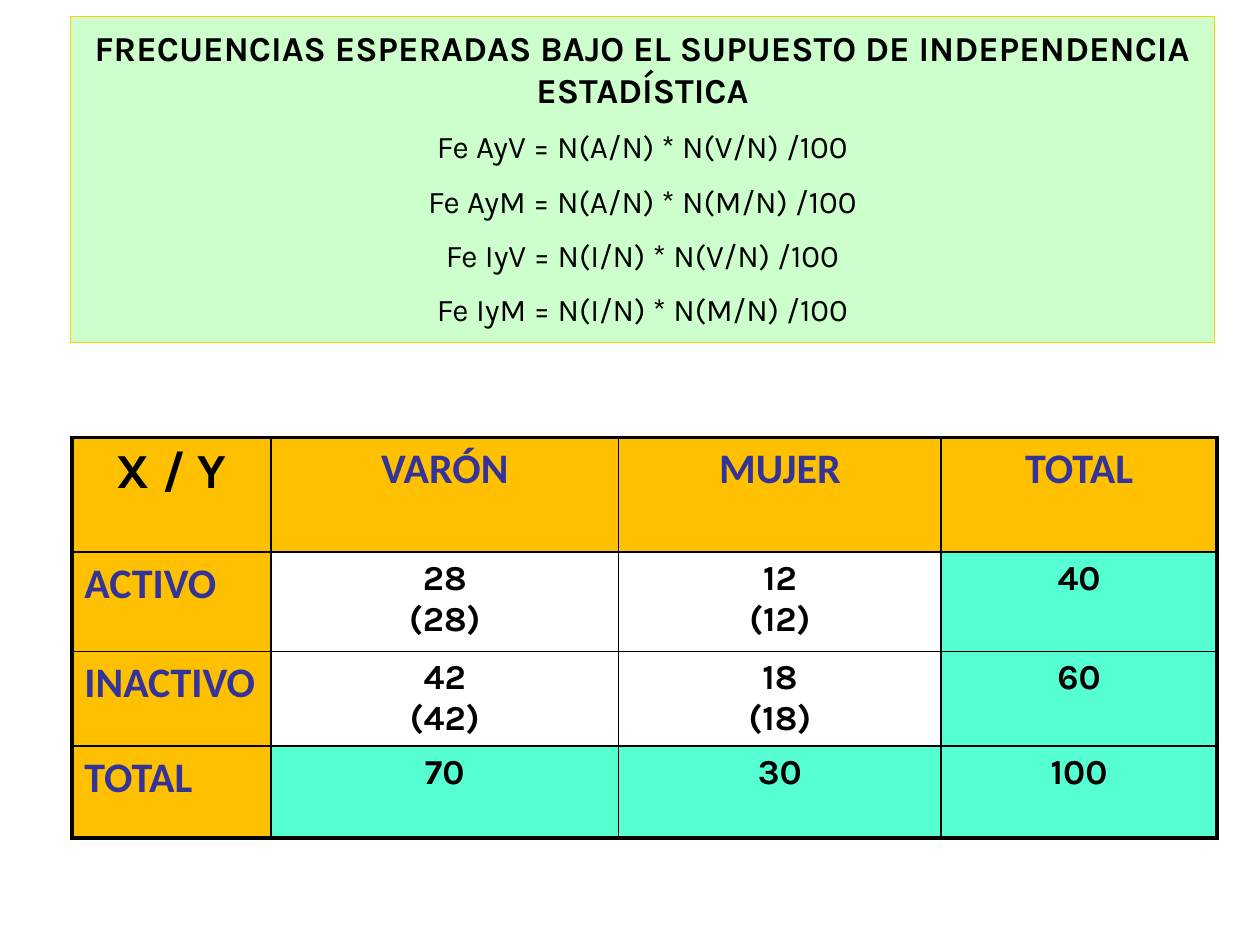
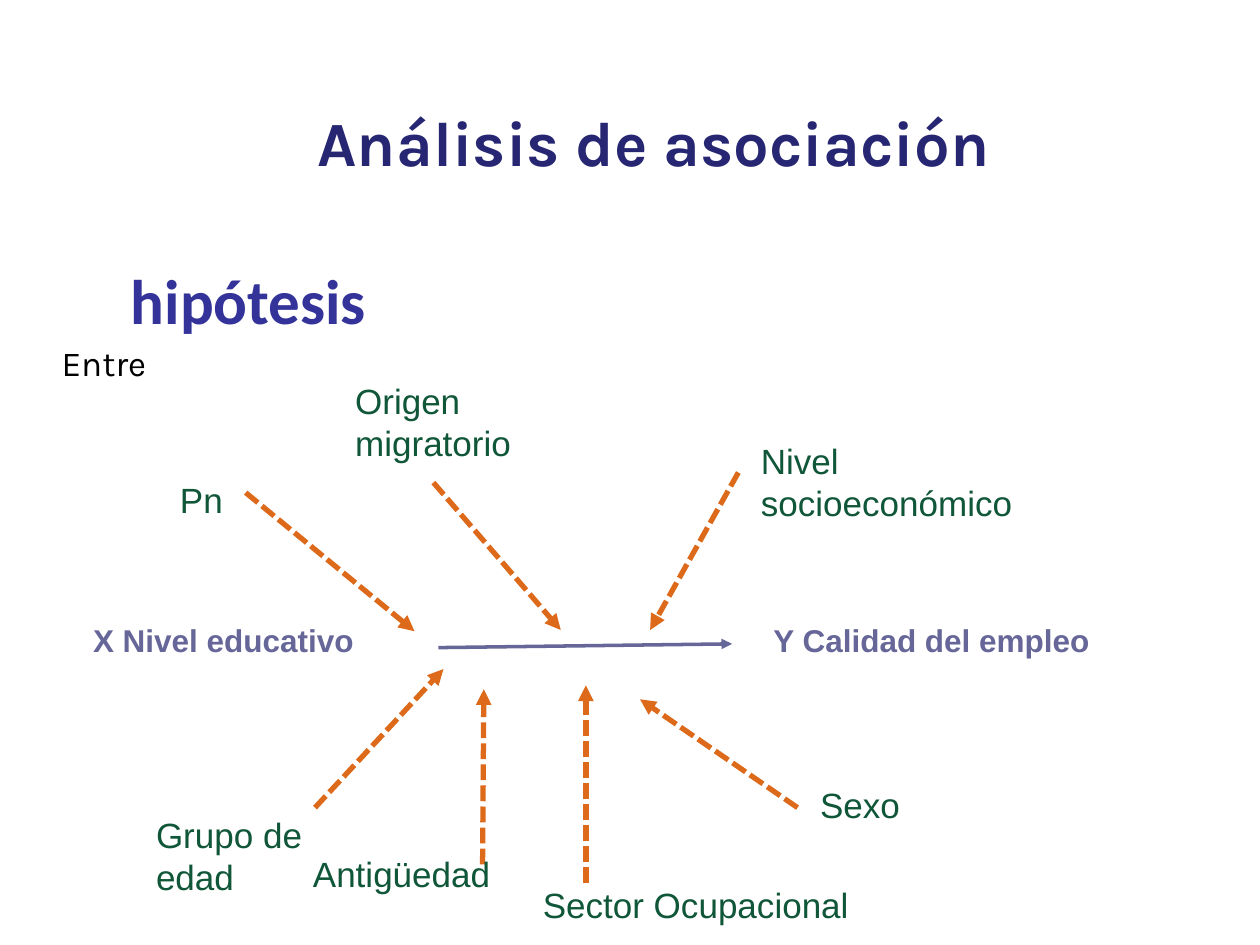
from dataclasses import dataclass

from lxml.etree import SubElement
from pptx import Presentation
from pptx.dml.color import RGBColor
from pptx.enum.dml import MSO_LINE
from pptx.enum.shapes import MSO_CONNECTOR, MSO_SHAPE
from pptx.enum.text import MSO_ANCHOR, PP_ALIGN
from pptx.oxml.ns import qn
from pptx.util import Inches, Pt


@dataclass(frozen=True)
class Theme:
    black: str = "000000"
    title: str = "262673"
    heading: str = "333399"
    axis: str = "666699"
    factor: str = "105638"
    arrow: str = "DD6A1B"
    panel: str = "CCFFCC"
    panel_line: str = "FFCF01"
    header: str = "FFC000"
    total: str = "56FFD2"
    main_font: str = "Karla"
    heading_font: str = "Calibri"
    diagram_font: str = "Arial"
    large: int = 36
    corner: int = 28
    header_size: int = 24
    medium: int = 20
    small: int = 18
    thin: float = 1
    thick: float = 2.25


THEME = Theme()
COLUMNS, ROWS = 100, 75  # grid laid over the 10 by 7.5 inch slide
SLIDE_WIDTH, SLIDE_HEIGHT = Inches(10), Inches(7.5)


def across(columns):
    return round(SLIDE_WIDTH * columns / COLUMNS)


def down(rows):
    return round(SLIDE_HEIGHT * rows / ROWS)


def box(left, top, width, height):
    return across(left), down(top), across(width), down(height)


def text_format(font, size, color, bold=False):
    return {"name": font, "size": Pt(size), "bold": bold,
            "color": RGBColor.from_string(color)}


TITLE = text_format(THEME.main_font, THEME.large, THEME.title, True)
HEADING = text_format(THEME.heading_font, THEME.large, THEME.heading, True)
PANEL_TITLE = text_format(THEME.main_font, THEME.medium, THEME.black, True)
FORMULA = text_format(THEME.main_font, THEME.small, THEME.black)
BODY = text_format(THEME.main_font, THEME.medium, THEME.black)
VARIABLE = text_format(THEME.diagram_font, THEME.small, THEME.axis, True)
FACTOR = text_format(THEME.diagram_font, THEME.medium, THEME.factor)
CORNER = text_format(THEME.main_font, THEME.corner, THEME.black, True)
HEADER = text_format(THEME.heading_font, THEME.header_size, THEME.heading, True)
VALUE = PANEL_TITLE


def write(frame, lines, alignment=PP_ALIGN.LEFT, space_before=0):
    """Write (text, format) pairs, one paragraph each."""
    frame.word_wrap = True
    for index, (text, values) in enumerate(lines):
        paragraph = frame.add_paragraph() if index else frame.paragraphs[0]
        paragraph.alignment = alignment
        paragraph.space_before = Pt(space_before)
        run = paragraph.add_run()
        run.text = text
        for name, value in values.items():
            if name == "color":
                run.font.color.rgb = value
            else:
                setattr(run.font, name, value)


def add_label(slide, text, place, values, alignment=PP_ALIGN.LEFT):
    label = slide.shapes.add_textbox(*box(*place))
    write(label.text_frame, [(text, values)], alignment)


def add_panel(slide, place, lines):
    panel = slide.shapes.add_shape(MSO_SHAPE.RECTANGLE, *box(*place))
    panel.shadow.inherit = False
    panel.fill.solid()
    panel.fill.fore_color.rgb = RGBColor.from_string(THEME.panel)
    panel.line.color.rgb = RGBColor.from_string(THEME.panel_line)
    panel.line.width = Pt(0.75)
    panel.text_frame.vertical_anchor = MSO_ANCHOR.TOP
    panel.text_frame.margin_top = Inches(0.08)
    write(panel.text_frame, lines, PP_ALIGN.CENTER, space_before=9.5)


def add_arrow(slide, start, end, color, width, dash=None):
    arrow = slide.shapes.add_connector(
        MSO_CONNECTOR.STRAIGHT, across(start[0]), down(start[1]),
        across(end[0]), down(end[1]))
    arrow.line.color.rgb = RGBColor.from_string(color)
    arrow.line.width = Pt(width)
    if dash:
        arrow.line.dash_style = dash
    properties = arrow.element.spPr
    SubElement(properties.find(qn("a:ln")), qn("a:tailEnd"), type="triangle")
    SubElement(properties, qn("a:effectLst"))


def set_borders(cell, outer_sides):
    properties = cell._tc.get_or_add_tcPr()
    for side in "LRTB":
        width = THEME.thick if side in outer_sides else THEME.thin
        line = SubElement(properties, qn(f"a:ln{side}"), w=str(Pt(width)))
        fill = SubElement(line, qn("a:solidFill"))
        SubElement(fill, qn("a:srgbClr"), val=THEME.black)


def add_contingency_table(slide, left, top, widths, heights, data):
    frame = slide.shapes.add_table(
        len(heights), len(widths), *box(left, top, sum(widths), sum(heights)))
    table = frame.table
    for column, width in zip(table.columns, widths):
        column.width = across(width)
    for row, height in zip(table.rows, heights):
        row.height = down(height)
    last_row, last_column = len(heights) - 1, len(widths) - 1

    for r, values in enumerate(data):
        for c, text in enumerate(values):
            cell = table.cell(r, c)
            edges = {"L": c == 0, "R": c == last_column,
                     "T": r == 0, "B": r == last_row}
            set_borders(cell, [side for side, outer in edges.items() if outer])

            # Headers, then margins, then observed and expected counts
            if r == 0 or c == 0:
                color, style = THEME.header, HEADER if r or c else CORNER
            else:
                on_margin = r == last_row or c == last_column
                color, style = THEME.total if on_margin else None, VALUE
            if color:
                cell.fill.solid()
                cell.fill.fore_color.rgb = RGBColor.from_string(color)
            else:
                cell.fill.background()
            alignment = PP_ALIGN.LEFT if r and c == 0 else PP_ALIGN.CENTER
            write(cell.text_frame,
                  [(line, style) for line in text.split("\n")], alignment)


def build_frequencies(presentation):
    slide = presentation.slides.add_slide(presentation.slide_layouts[6])

    # Formulas for the expected frequencies
    formulas = [(f"Fe {x}y{y} = N({x}/N) * N({y}/N) /100", FORMULA)
                for x in "AI" for y in "VM"]
    heading = "FRECUENCIAS ESPERADAS BAJO EL SUPUESTO DE INDEPENDENCIA ESTADÍSTICA"
    add_panel(slide, (5.6, 1.3, 90.8, 25.9), [(heading, PANEL_TITLE), *formulas])

    # Observed counts with expected counts in brackets
    add_contingency_table(
        slide, 5.7, 34.7, widths=(15.8, 27.6, 25.6, 21.9),
        heights=(9.1, 7.9, 7.5, 7.3),
        data=[("X / Y", "VARÓN", "MUJER", "TOTAL"),
              ("ACTIVO", "28\n(28)", "12\n(12)", "40"),
              ("INACTIVO", "42\n(42)", "18\n(18)", "60"),
              ("TOTAL", "70", "30", "100")])


def build_association(presentation):
    slide = presentation.slides.add_slide(presentation.slide_layouts[5])

    # Title and headings
    title = slide.shapes.title
    title.left, title.top, title.width, title.height = box(24.2, 6.4, 61.8, 8.3)
    title.text_frame.vertical_anchor = MSO_ANCHOR.BOTTOM
    write(title.text_frame, [("Análisis de asociación", TITLE)])
    add_label(slide, "hipótesis", (9.4, 20.3, 65, 7), HEADING)
    add_label(slide, "Entre", (3.9, 26.6, 87.5, 4.4), BODY)

    # Main relation between the two variables
    add_label(slide, "X Nivel educativo", (6.4, 48.8, 26, 4), VARIABLE)
    add_label(slide, "Y Calidad del empleo", (60.4, 48.8, 36, 4), VARIABLE)
    add_arrow(slide, (34.8, 51.4), (58.1, 51.1), THEME.axis, 2)

    # Intervening factors: label place, arrow start, arrow end
    factors = [
        ("Pn", (13.3, 37.5, 7.8, 4.4), (19.5, 39.1), (32.9, 50.1)),
        ("Origen migratorio", (27.2, 29.6, 16.5, 7.7), (34.4, 38.3), (44.5, 50)),
        ("Nivel socioeconómico", (59.4, 34.4, 24.2, 7.7), (58.6, 37.5), (51.6, 50)),
        ("Grupo de edad", (11.4, 64.1, 16.7, 7.7), (25, 64.1), (35.2, 53.1)),
        ("Antigüedad", (21.1, 67.2, 18.8, 4.4), (38.3, 68.6), (38.4, 54.7)),
        ("Sector Ocupacional", (42.1, 69.6, 28.7, 4.4), (46.5, 70.1), (46.5, 54.4)),
        ("Sexo", (64.1, 61.7, 24.2, 4.4), (63.3, 64.1), (50.8, 55.5)),
    ]
    for text, place, start, end in factors:
        alignment = PP_ALIGN.RIGHT if text == "Antigüedad" else PP_ALIGN.LEFT
        add_arrow(slide, start, end, THEME.arrow, 3, MSO_LINE.SQUARE_DOT)
        add_label(slide, text, place, FACTOR, alignment)


def main():
    presentation = Presentation()
    presentation.slide_width = SLIDE_WIDTH
    presentation.slide_height = SLIDE_HEIGHT
    build_frequencies(presentation)
    build_association(presentation)
    presentation.save("out.pptx")


if __name__ == "__main__":
    main()
